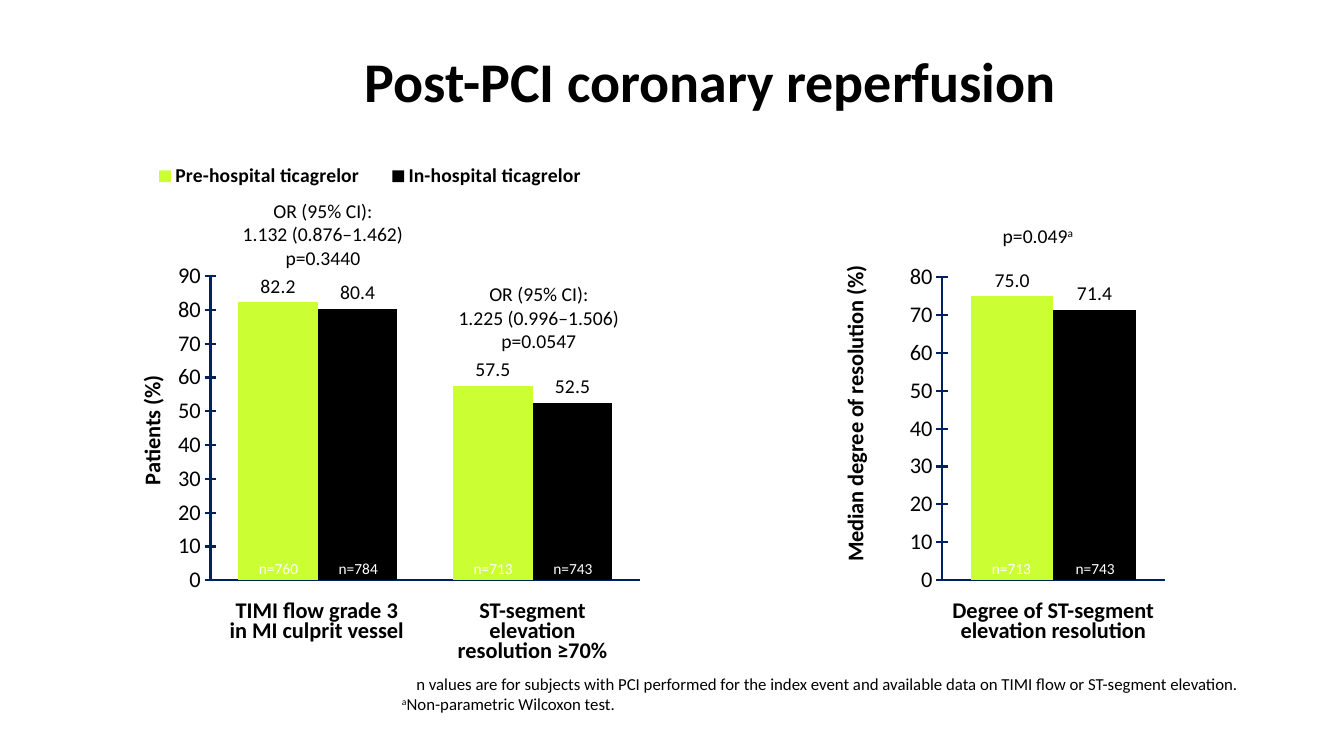
"""Build the slide comparing coronary reperfusion after PCI in two column charts."""
from dataclasses import dataclass

from lxml import etree
from pptx import Presentation
from pptx.chart.data import CategoryChartData
from pptx.dml.color import RGBColor
from pptx.enum.chart import (XL_CHART_TYPE, XL_LABEL_POSITION, XL_LEGEND_POSITION,
                             XL_TICK_LABEL_POSITION, XL_TICK_MARK)
from pptx.enum.text import MSO_ANCHOR, PP_ALIGN
from pptx.oxml.ns import qn
from pptx.util import Cm, Pt

CLUSTERED = XL_CHART_TYPE.COLUMN_CLUSTERED
OUTSIDE_END = XL_LABEL_POSITION.OUTSIDE_END
LEGEND_TOP = XL_LEGEND_POSITION.TOP
NO_LABELS = XL_TICK_LABEL_POSITION.NONE
NO_TICKS, CROSS_TICKS = XL_TICK_MARK.NONE, XL_TICK_MARK.CROSS
MIDDLE = MSO_ANCHOR.MIDDLE
CENTER, LEFT = PP_ALIGN.CENTER, PP_ALIGN.LEFT

FONT = "Calibri"
BLACK, WHITE, LIME, NAVY = "000000", "FFFFFF", "CCFF33", "002060"
SUPERSCRIPT = "^"


@dataclass(frozen=True)
class Box:
    """A rectangle in centimetres."""
    left: float
    top: float
    width: float
    height: float

    def lengths(self) -> tuple[Cm, Cm, Cm, Cm]:
        """Return the four sides as slide lengths."""
        return Cm(self.left), Cm(self.top), Cm(self.width), Cm(self.height)


@dataclass(frozen=True)
class Label:
    """A text box; each paragraph is a tuple of runs, '^' marks a superscript run."""
    box: Box
    paragraphs: tuple[tuple[str, ...], ...]
    size: int = 14
    color: str = BLACK
    bold: bool = False
    spacing: int | None = None
    alignments: tuple = (CENTER, CENTER, CENTER)
    wrap: bool = False


@dataclass(frozen=True)
class ColumnChart:
    """A clustered column chart with layouts as fractions of its frame."""
    box: Box
    axis_title: str
    maximum: int
    categories: tuple[str, ...]
    series: dict[str, tuple[float, ...]]
    plot_layout: tuple[float, ...]
    title_layout: tuple[float, ...]
    legend_layout: tuple[float, ...] = ()


def category_label(left: float, width: float, height: float, *lines: str) -> Label:
    """Describe a bold label below a group of columns."""
    return Label(Box(left, 15.09, width, height), tuple((line,) for line in lines),
                 size=16, bold=True, spacing=14)


def odds_label(left: float, top: float, *lines: str) -> Label:
    """Describe an odds ratio above a group of columns."""
    return Label(Box(left, top, 4.6, 2.06), tuple((line,) for line in lines))


def count_label(left: float, count: int) -> Label:
    """Describe the subject count at the foot of a column."""
    return Label(Box(left, 13.97, 1.7, 0.84), ((f"n={count}",),), size=11, color=WHITE)


CHARTS = (
    ColumnChart(Box(1.7, 3.61, 14.96, 12.78), "Patients (%)", 90, ("1", "2"),
                {"Pre-hospital ticagrelor": (82.2, 57.5),
                 "In-hospital ticagrelor": (80.4, 52.5)},
                (0.241, 0.262, 0.724, 0.6), (0.11, 0.45), (0.11, 0.03, 0.8, 0.07)),
    ColumnChart(Box(20.88, 5.72, 12.14, 10.97), "Median degree of resolution (%)", 80, ("1",),
                {"Series 1": (75.0,), "Series 2": (71.4,)},
                (0.236, 0.116, 0.462, 0.695), (0.015, 0.08)),
)

COUNTS = ((24.64, 713), (26.75, 743), (6.17, 760), (8.18, 784), (11.58, 713), (13.59, 743))

LABELS = (
    category_label(23.7, 5.69, 1.24, "Degree of ST-segment\nelevation resolution"),
    *(count_label(left, count) for left, count in COUNTS),
    Label(Box(25.02, 5.51, 2.34, 0.86), (("p=0.049", "^a"),), alignments=(LEFT,)),
    category_label(5.51, 4.95, 1.24, "TIMI flow grade 3", "in MI culprit vessel"),
    category_label(11.25, 4.34, 1.75, "ST-segment\nelevation\nresolution ≥70%"),
    odds_label(5.84, 4.88, "OR (95% CI):\n1.132 (0.876–1.462)", "p=0.3440"),
    odds_label(11.28, 6.99, "OR (95% CI):", "1.225 (0.996–1.506)", "p=0.0547"),
    Label(Box(9.88, 16.84, 21.95, 1.27),
          (("n values are for subjects with PCI performed for the index event and "
            "available data on TIMI flow or ST-segment elevation.",),
           ("^a", "Non-parametric Wilcoxon test.")),
          size=12, alignments=(CENTER, LEFT), wrap=True),
)


def rgb(color: str) -> RGBColor:
    """Turn a hex string into a colour."""
    return RGBColor.from_string(color)


def style_font(font, size: int, color: str = BLACK, bold: bool = False) -> None:
    """Set the typeface, size, colour and weight of a font."""
    font.name, font.size, font.bold = FONT, Pt(size), bold
    font.color.rgb = rgb(color)


def add_run(paragraph, text: str, size: int, color: str, bold: bool) -> None:
    """Add one run, with line breaks where the text has them."""
    for index, line in enumerate(text.removeprefix(SUPERSCRIPT).split("\n")):
        if index:
            paragraph.add_line_break()
        run = paragraph.add_run()
        run.text = line
        style_font(run.font, size, color, bold)
        if text.startswith(SUPERSCRIPT):
            run._r.get_or_add_rPr().set("baseline", "30000")


def draw_title(slide, box: Box, text: str) -> None:
    """Place and fill the title placeholder."""
    title = slide.shapes.title
    title.left, title.top, title.width, title.height = box.lengths()
    frame = title.text_frame
    frame.vertical_anchor = MIDDLE
    frame.margin_left = frame.margin_right = Cm(0.33)
    frame.margin_top = frame.margin_bottom = Cm(0.18)
    frame.paragraphs[0].alignment = CENTER
    add_run(frame.paragraphs[0], text, 40, BLACK, True)


def draw_label(slide, label: Label) -> None:
    """Draw a text box run by run."""
    frame = slide.shapes.add_textbox(*label.box.lengths()).text_frame
    frame.word_wrap = label.wrap
    for index, runs in enumerate(label.paragraphs):
        paragraph = frame.add_paragraph() if index else frame.paragraphs[0]
        paragraph.alignment = label.alignments[index]
        if label.spacing:
            paragraph.line_spacing = Pt(label.spacing)
        for text in runs:
            add_run(paragraph, text, label.size, label.color, label.bold)


def set_layout(element, index: int, fractions: tuple[float, ...], inner: bool = False) -> None:
    """Give a chart part a manual layout."""
    for old_layout in element.findall(qn("c:layout")):
        element.remove(old_layout)
    layout = etree.Element(qn("c:layout"))
    manual = etree.SubElement(layout, qn("c:manualLayout"))
    settings = [("layoutTarget", "inner")] if inner else []
    settings += [("xMode", "edge"), ("yMode", "edge")]
    settings += [(name, str(value)) for name, value in zip("xywh", fractions)]
    for name, value in settings:
        etree.SubElement(manual, qn(f"c:{name}")).set("val", value)
    element.insert(index, layout)


def style_axes(chart, column_chart: ColumnChart) -> None:
    """Format both axes and the value axis title."""
    category_axis, value_axis = chart.category_axis, chart.value_axis
    for axis in (category_axis, value_axis):
        axis.has_major_gridlines = False
        axis.minor_tick_mark = NO_TICKS
        axis.format.line.color.rgb = rgb(NAVY)
        axis.format.line.width = Pt(1.5)
    category_axis.major_tick_mark = NO_TICKS
    category_axis.tick_label_position = NO_LABELS
    value_axis.major_tick_mark = CROSS_TICKS
    value_axis.minimum_scale, value_axis.maximum_scale = 0, column_chart.maximum
    value_axis.major_unit = 10
    style_font(value_axis.tick_labels.font, 16)
    title = value_axis.axis_title
    add_run(title.text_frame.paragraphs[0], column_chart.axis_title, 16, BLACK, True)
    title_element = title._element
    title_element.find(f".//{qn('a:bodyPr')}").set("rot", "-5400000")
    set_layout(title_element, 1, column_chart.title_layout)


def draw_chart(slide, column_chart: ColumnChart) -> None:
    """Draw one column chart with its value labels."""
    data = CategoryChartData()
    data.categories = column_chart.categories
    for name, values in column_chart.series.items():
        data.add_series(name, values)
    chart = slide.shapes.add_chart(CLUSTERED, *column_chart.box.lengths(), data).chart
    style_font(chart.font, 18)
    chart.has_title = False
    style_axes(chart, column_chart)
    plot = chart.plots[0]
    plot.gap_width, plot.overlap, plot.vary_by_categories = 70, 0, False
    for series, color in zip(plot.series, (LIME, BLACK)):
        series.format.fill.solid()
        series.format.fill.fore_color.rgb = rgb(color)
        labels = series.data_labels
        labels.show_value, labels.position = True, OUTSIDE_END
        labels.number_format, labels.number_format_is_linked = "0.0", False
        style_font(labels.font, 14)
    set_layout(chart._chartSpace.find(f".//{qn('c:plotArea')}"), 0, column_chart.plot_layout, True)
    chart.has_legend = bool(column_chart.legend_layout)
    if chart.has_legend:
        chart.legend.position, chart.legend.include_in_layout = LEGEND_TOP, False
        style_font(chart.legend.font, 14, bold=True)
        set_layout(chart.legend._element, 1, column_chart.legend_layout)


def main() -> None:
    """Build and save the presentation."""
    presentation = Presentation()
    presentation.slide_width, presentation.slide_height = Cm(33.87), Cm(19.05)
    slide = presentation.slides.add_slide(presentation.slide_layouts[5])
    draw_title(slide, Box(2.82, 0.43, 30.48, 3.18), "Post-PCI coronary reperfusion ")
    for column_chart in CHARTS:
        draw_chart(slide, column_chart)
    for label in LABELS:
        draw_label(slide, label)
    presentation.save("out.pptx")


if __name__ == "__main__":
    main()
